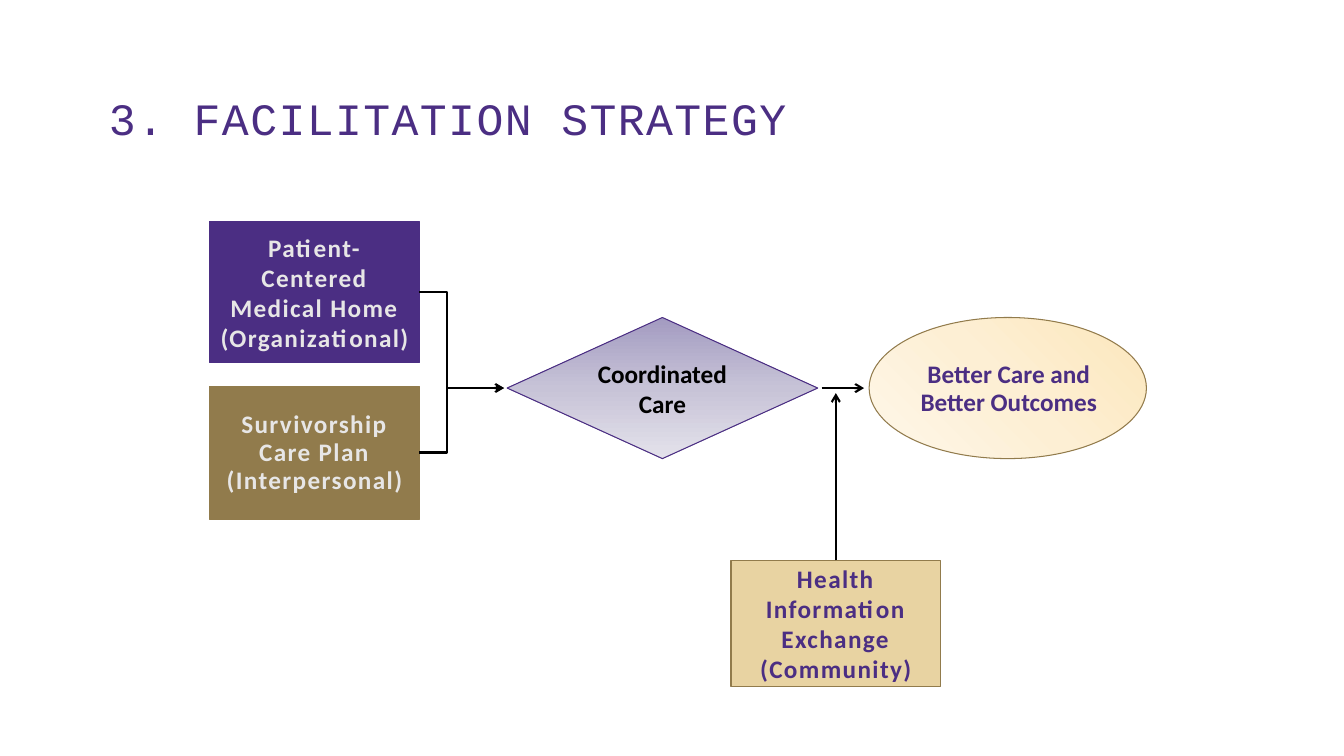
import pptx
import pptx.dml.color
import pptx.enum.shapes
import pptx.enum.text
import pptx.oxml
import pptx.oxml.ns
import pptx.util

Inches, Pt = pptx.util.Inches, pptx.util.Pt
SHAPE = pptx.enum.shapes.MSO_SHAPE
CONNECTOR = pptx.enum.shapes.MSO_CONNECTOR
ALIGN = pptx.enum.text.PP_ALIGN
ANCHOR = pptx.enum.text.MSO_ANCHOR
PURPLE, GOLD, SAND, PALE, BLACK = "4B2E83", "917B4C", "E8D3A2", "E7E6E6", "000000"
rgb = pptx.dml.color.RGBColor.from_string


def write(shape, text, color, size=18, font="Calibri", bold=True, align=ALIGN.CENTER,
          anchor=ANCHOR.MIDDLE, line_spacing=None, tracking=0):
    frame = shape.text_frame
    frame.text = text
    frame.word_wrap = True
    frame.auto_size = pptx.enum.text.MSO_AUTO_SIZE.NONE
    frame.vertical_anchor = anchor
    paragraph = frame.paragraphs[0]
    paragraph.alignment = align
    paragraph.line_spacing = line_spacing
    for run in paragraph.runs:
        run.font.name, run.font.size, run.font.bold = font, Pt(size), bold
        run.font.color.rgb = rgb(color)
        if tracking:
            run.font._element.set("spc", str(tracking * 100))


def add_node(kind, left, top, width, height, fill, outline):
    """Add a shape; fill is a hex colour, or a pair of three stops and a direction."""
    node = slide.shapes.add_shape(kind, *map(Inches, (left, top, width, height)))
    node.shadow.inherit = False
    node.line.color.rgb = rgb(outline)
    node.line.width = Pt(0.75)
    if isinstance(fill, str):
        node.fill.solid()
        node.fill.fore_color.rgb = rgb(fill)
    else:
        stops, direction = fill
        stop_xml = "".join(f'<a:gs pos="{i * 50000}"><a:srgbClr val="{c}"/></a:gs>'
                           for i, c in enumerate(stops))
        gradient = pptx.oxml.parse_xml(
            f'<a:gradFill {pptx.oxml.ns.nsdecls("a")} rotWithShape="1">'
            f'<a:gsLst>{stop_xml}</a:gsLst>{direction}</a:gradFill>')
        node._element.spPr.find(pptx.oxml.ns.qn("a:prstGeom")).addnext(gradient)
    return node


deck = pptx.Presentation()
deck.slide_width, deck.slide_height = Inches(13.33), Inches(7.5)
slide = deck.slides.add_slide(deck.slide_layouts[5])

# Title
title = slide.shapes.title
title.left, title.top, title.width, title.height = map(Inches, (0.98, 0.41, 11.93, 1.08))
write(title, "3. FACILITATION STRATEGY", PURPLE, 32, "Courier New", False,
      ALIGN.LEFT, ANCHOR.BOTTOM, 0.9, 1)

# Strategy boxes
BOX_WIDTH, INPUT_LEFT = 2.08, 2.08
boxes = []
for text, left, top, height, fill, outline, color, spacing in [
    ("Patient- Centered Medical Home\v(Organizational)",
     INPUT_LEFT, 2.2, 1.4, PURPLE, PURPLE, PALE, None),
    ("Survivorship Care Plan\v(Interpersonal)",
     INPUT_LEFT, 3.83, 1.32, GOLD, GOLD, PALE, Pt(20)),
    ("Health Information Exchange\v(Community)",
     7.25, 5.56, 1.25, SAND, GOLD, PURPLE, None),
]:
    box = add_node(SHAPE.RECTANGLE, left, top, BOX_WIDTH, height, fill, outline)
    write(box, text, color, line_spacing=spacing, tracking=1)
    boxes.append(box)
medical_home, care_plan, exchange = boxes

# Arrows: both inputs merge on the flow axis, the exchange feeds in from below
AXIS, NODE_HEIGHT = 3.85, 1.4
INPUT_RIGHT = INPUT_LEFT + BOX_WIDTH
for kind, start, end, head, source, side in [
    (CONNECTOR.ELBOW, (INPUT_RIGHT, 2.9), (5, AXIS), "triangle", medical_home, 3),
    (CONNECTOR.ELBOW, (INPUT_RIGHT, 4.49), (5, AXIS), "arrow", care_plan, 3),
    (CONNECTOR.STRAIGHT, (8.29, 5.56), (8.29, 3.9), "arrow", exchange, 0),
    (CONNECTOR.STRAIGHT, (8.15, AXIS), (8.57, AXIS), "arrow", None, None),
]:
    arrow = slide.shapes.add_connector(kind, *map(Inches, start + end))
    if source is not None:
        arrow.begin_connect(source, side)
    arrow.line.color.rgb = rgb(BLACK)
    arrow.line.width = Pt(1.5)
    properties = arrow._element.spPr
    pptx.oxml.ns.qn("a:ln")
    line = arrow.line._get_or_add_ln()
    line.append(pptx.oxml.parse_xml(
        f'<a:tailEnd {pptx.oxml.ns.nsdecls("a")} type="{head}"/>'))
    properties.append(pptx.oxml.parse_xml(f'<a:effectLst {pptx.oxml.ns.nsdecls("a")}/>'))
    if kind == CONNECTOR.ELBOW:
        bend = properties.find(pptx.oxml.ns.qn("a:prstGeom"))
        bend.get_or_add_avLst().append(pptx.oxml.parse_xml(
            f'<a:gd {pptx.oxml.ns.nsdecls("a")} name="adj1" fmla="val 33000"/>'))

# Outcome ellipse and coordinated care diamond, centred on the flow axis
NODE_TOP = AXIS - NODE_HEIGHT / 2
corner_glow = '<a:path path="circle"><a:fillToRect l="100000" b="100000"/></a:path>'
add_node(SHAPE.OVAL, 8.62, NODE_TOP, 2.75, NODE_HEIGHT,
         (("FCE7BC", "FDEFD4", "FEF7EA"), corner_glow), GOLD)
care = add_node(SHAPE.DIAMOND, 5.03, NODE_TOP, 3.08, NODE_HEIGHT,
                (("A39BC1", "C7C3D7", "E4E2EB"), '<a:lin ang="5400000" scaled="0"/>'), PURPLE)
write(care, "Coordinated Care", BLACK)

# Outcome label
outcome = slide.shapes.add_textbox(*map(Inches, (8.92, 3.53, 2.17, 0.62)))
write(outcome, "Better Care and Better Outcomes", PURPLE, anchor=ANCHOR.TOP, line_spacing=Pt(20))

deck.save("out.pptx")
